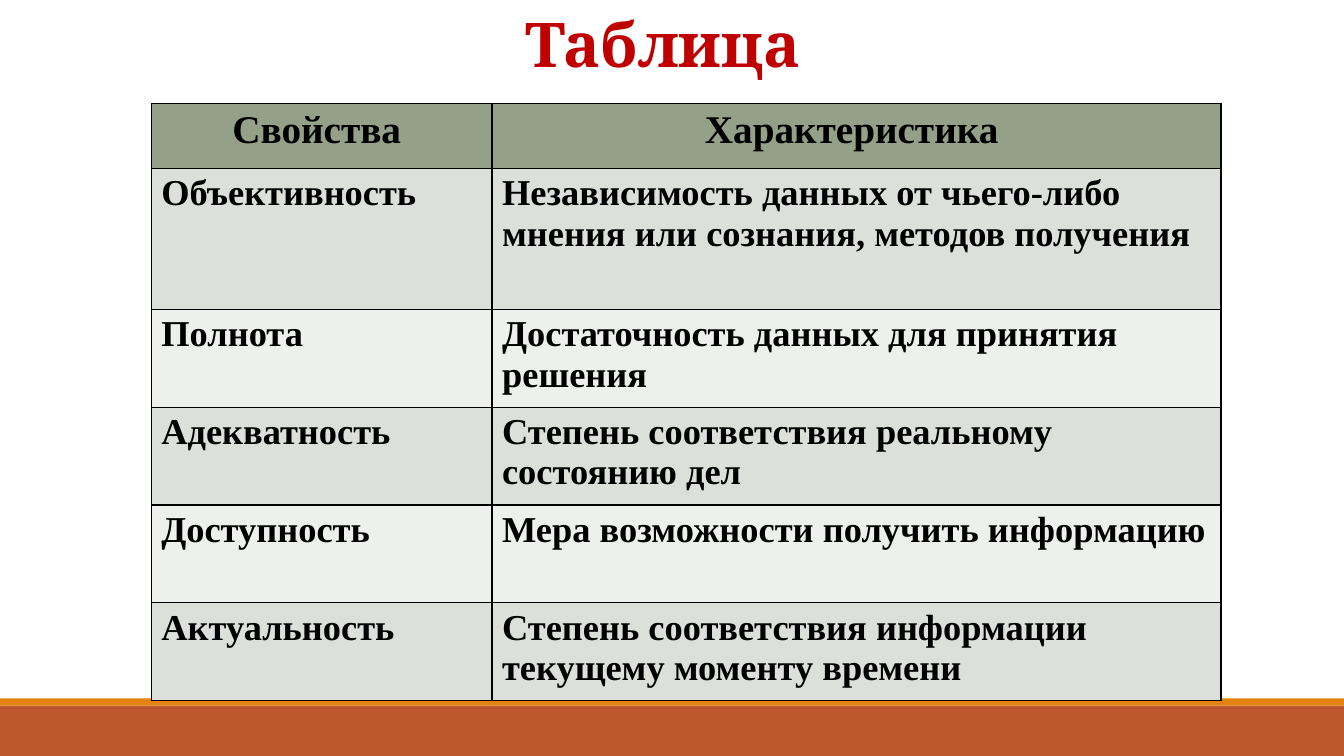
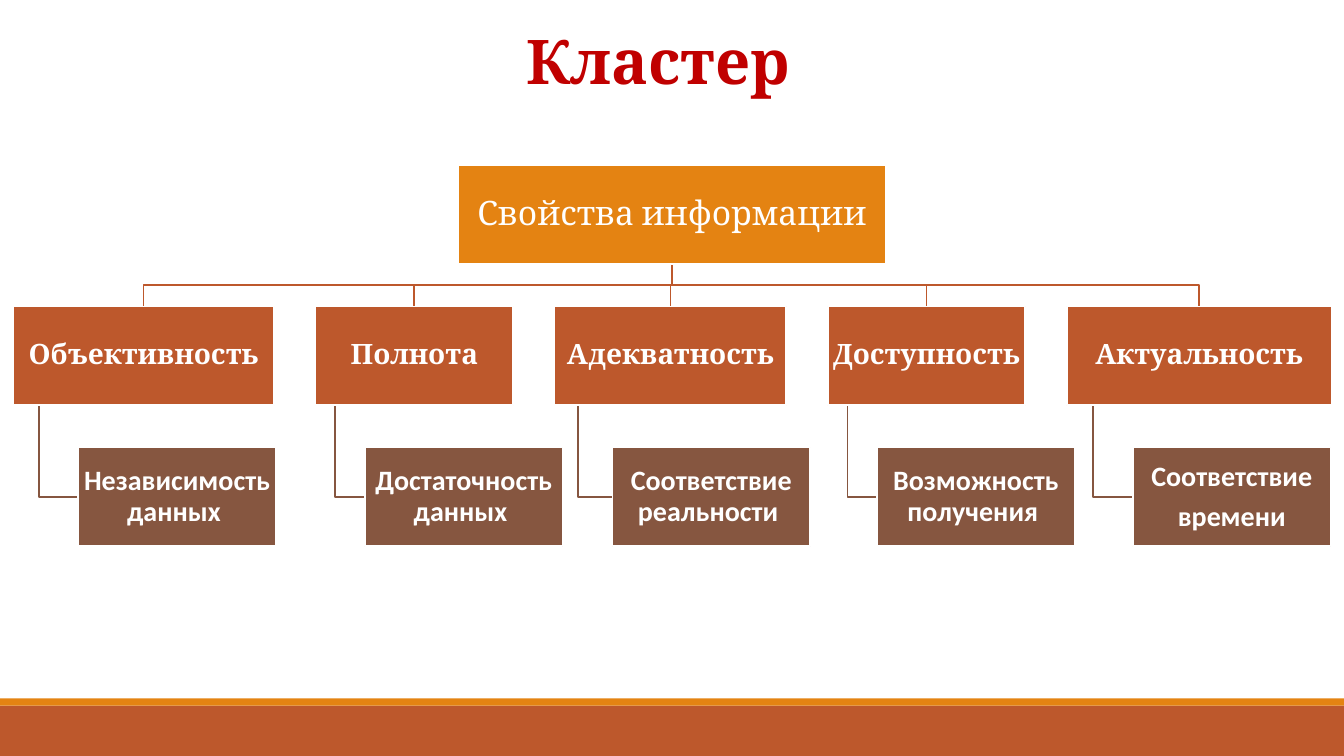
"""Build two slides on the properties of information: a table and a cluster."""
from dataclasses import dataclass

from lxml import etree
from pptx import Presentation
from pptx.dml.color import RGBColor
from pptx.enum import shapes, text
from pptx.oxml import ns
from pptx.util import Inches, Pt


@dataclass(frozen=True)
class Theme:
    """Colours, fonts and type sizes."""
    orange: str = "E48312"
    rust: str = "BD582C"
    brown: str = "865640"
    red: str = "C00000"
    white: str = "FFFFFF"
    black: str = "000000"
    header: str = "94A088"
    stripes: tuple = ("DCDFDA", "EEF0ED")
    serif: str = "Cambria"
    sans: str = "Calibri"
    table_font: str = "Times New Roman"
    title_size: int = 44
    header_size: int = 28
    cell_size: int = 26
    root_size: int = 24
    node_size: int = 20
    line_width: float = 1.25


THEME = Theme()
SLIDE_WIDTH, SLIDE_HEIGHT = 13.33, 7.5

BANDS = [(7, 0.5, THEME.rust), (6.93, 0.07, THEME.orange)]

TABLE_TITLE = ("Таблица ", (0.16, 0.01, 12.97, 1.45))
TABLE_ROWS = [
    ("Свойства ", "Характеристика "),
    ("Объективность",
     "Независимость данных от чьего-либо мнения или сознания, методов получения"),
    ("Полнота", "Достаточность данных для принятия решения"),
    ("Адекватность", "Степень соответствия реальному состоянию дел"),
    ("Доступность", "Мера возможности получить информацию"),
    ("Актуальность", "Степень соответствия информации текущему моменту времени"),
]
TABLE_LEFT, TABLE_TOP = 1.5, 1.03
COLUMN_WIDTHS = [3.38, 7.23]
ROW_HEIGHTS = [0.64, 1.4] + [0.97] * 4

CLUSTER_TITLE = ("Кластер", (4.03, 0.18, 5, 0.84))
ROOT = "Свойства информации"
BRANCHES = [
    ("Объективность", 2.59, "Независимость данных "),
    ("Полнота", 1.96, "Достаточность данных "),
    ("Адекватность", 2.3, "Соответствие реальности "),
    ("Доступность", 1.96, "Возможность получения "),
    ("Актуальность", 2.63, "Соответствие\nвремени"),
]
ROOT_WIDTH, LEAF_WIDTH, NODE_HEIGHT = 4.24, 1.96, 0.98
CLUSTER_TOP, LEVEL_STEP = 1.64, 1.4
BRANCH_LEFT, BRANCH_GAP = 0.13, 0.41
STEM_SHARE, LEAF_SHARE = 0.1, 0.25


def color(value):
    """Turn a hex string into a colour."""
    return RGBColor.from_string(value)


def format_text(paragraph, font_name, size, font_color, bold=True):
    """Set the font of every run in a paragraph."""
    for run in paragraph.runs:
        font = run.font
        font.name, font.size, font.bold = font_name, Pt(size), bold
        font.color.rgb = color(font_color)


def add_box(slide, box, fill, line=None):
    """Add a flat rectangle."""
    shape = slide.shapes.add_shape(
        shapes.MSO_SHAPE.RECTANGLE, *(Inches(length) for length in box))
    shape.shadow.inherit = False
    shape.fill.solid()
    shape.fill.fore_color.rgb = color(fill)
    if line:
        shape.line.color.rgb = color(line)
        shape.line.width = Pt(THEME.line_width)
    else:
        shape.line.fill.background()
    return shape


def add_titled_slide(presentation, title_text, box):
    """Add a title-only slide with the shared title style."""
    slide = presentation.slides.add_slide(presentation.slide_layouts[5])
    title = slide.shapes.title
    title.left, title.top, title.width, title.height = (
        Inches(length) for length in box)
    frame = title.text_frame
    frame.text = title_text
    frame.auto_size = text.MSO_AUTO_SIZE.NONE
    frame.vertical_anchor = text.MSO_ANCHOR.TOP
    paragraph = frame.paragraphs[0]
    paragraph.alignment = text.PP_ALIGN.CENTER
    format_text(paragraph, THEME.serif, THEME.title_size, THEME.red)
    return slide


def add_master_bands(presentation, slide):
    """Draw the footer bands and move them to the slide master."""
    tree = presentation.slide_master.shapes.element
    for index, (top, height, fill) in enumerate(BANDS):
        band = add_box(slide, (0, top, SLIDE_WIDTH, height), fill)
        band.element.nvSpPr.cNvPr.set("id", str(101 + index))
        tree.insert(2 + index, band.element)


def set_borders(cell):
    """Draw a thin line on all four sides of a cell."""
    properties = cell._tc.get_or_add_tcPr()
    for index, side in enumerate(("lnL", "lnR", "lnT", "lnB")):
        line = etree.Element(ns.qn(f"a:{side}"), w=str(Pt(1)))
        fill = etree.SubElement(line, ns.qn("a:solidFill"))
        etree.SubElement(fill, ns.qn("a:srgbClr"), val=THEME.black)
        properties.insert(index, line)


def add_properties_table(slide):
    """Add the table of properties."""
    frame = slide.shapes.add_table(
        len(TABLE_ROWS), len(COLUMN_WIDTHS), Inches(TABLE_LEFT), Inches(TABLE_TOP),
        Inches(sum(COLUMN_WIDTHS)), Inches(sum(ROW_HEIGHTS)))
    table = frame.table
    for column, width in zip(table.columns, COLUMN_WIDTHS):
        column.width = Inches(width)
    for row_index, (values, height) in enumerate(zip(TABLE_ROWS, ROW_HEIGHTS)):
        table.rows[row_index].height = Inches(height)
        is_header = row_index == 0
        fill = THEME.header if is_header else THEME.stripes[(row_index - 1) % 2]
        size = THEME.header_size if is_header else THEME.cell_size
        for column_index, value in enumerate(values):
            cell = table.cell(row_index, column_index)
            cell.text_frame.text = value
            cell.fill.solid()
            cell.fill.fore_color.rgb = color(fill)
            set_borders(cell)
            paragraph = cell.text_frame.paragraphs[0]
            paragraph.alignment = (
                text.PP_ALIGN.CENTER if is_header else text.PP_ALIGN.LEFT)
            format_text(paragraph, THEME.table_font, size, THEME.black)


def level_top(level):
    """Return the top of a cluster level."""
    return CLUSTER_TOP + LEVEL_STEP * level


def add_node(slide, label, left, level, width, fill, font_name,
             size=THEME.node_size, bold=True):
    """Add one labelled cluster box."""
    shape = add_box(slide, (left, level_top(level), width, NODE_HEIGHT),
                    fill, THEME.white)
    frame = shape.text_frame
    frame.text = label
    frame.word_wrap = True
    frame.vertical_anchor = text.MSO_ANCHOR.MIDDLE
    frame.margin_left = frame.margin_right = Inches(0.01)
    frame.margin_top = frame.margin_bottom = Inches(0.01)
    for paragraph in frame.paragraphs:
        paragraph.alignment = text.PP_ALIGN.CENTER
        paragraph.line_spacing = 0.9
        paragraph.space_after = Pt(size * 0.35)
        format_text(paragraph, font_name, size, THEME.white, bold)


def add_polyline(slide, points, line_color):
    """Add an open line through the points."""
    start, *others = [(Inches(x), Inches(y)) for x, y in points]
    builder = slide.shapes.build_freeform(*start)
    builder.add_line_segments(others, close=False)
    shape = builder.convert_to_shape()
    shape.shadow.inherit = False
    shape.fill.background()
    shape.line.color.rgb = color(line_color)
    shape.line.width = Pt(THEME.line_width)


def add_cluster(slide):
    """Add the root, its branches and their leaves."""
    center = SLIDE_WIDTH / 2
    root_bottom = level_top(0) + NODE_HEIGHT
    branch_top = level_top(1)
    branch_bottom = branch_top + NODE_HEIGHT
    middle = (root_bottom + branch_top) / 2
    leaf_middle = level_top(2) + NODE_HEIGHT / 2
    left = BRANCH_LEFT
    for branch, width, leaf in BRANCHES:
        branch_center = left + width / 2
        stem = left + width * STEM_SHARE
        leaf_left = left + width * LEAF_SHARE
        add_polyline(slide, [(center, root_bottom), (center, middle),
                             (branch_center, middle), (branch_center, branch_top)],
                     THEME.rust)
        add_polyline(slide, [(stem, branch_bottom), (stem, leaf_middle),
                             (leaf_left, leaf_middle)], THEME.brown)
        add_node(slide, branch, left, 1, width, THEME.rust, THEME.serif)
        add_node(slide, leaf, leaf_left, 2, LEAF_WIDTH, THEME.brown, THEME.sans)
        left += width + BRANCH_GAP
    add_node(slide, ROOT, center - ROOT_WIDTH / 2, 0, ROOT_WIDTH, THEME.orange,
             THEME.serif, THEME.root_size, bold=False)


def main():
    """Build and save the presentation."""
    presentation = Presentation()
    presentation.slide_width = Inches(SLIDE_WIDTH)
    presentation.slide_height = Inches(SLIDE_HEIGHT)
    table_slide = add_titled_slide(presentation, *TABLE_TITLE)
    add_master_bands(presentation, table_slide)
    add_properties_table(table_slide)
    add_cluster(add_titled_slide(presentation, *CLUSTER_TITLE))
    presentation.save("out.pptx")


if __name__ == "__main__":
    main()
